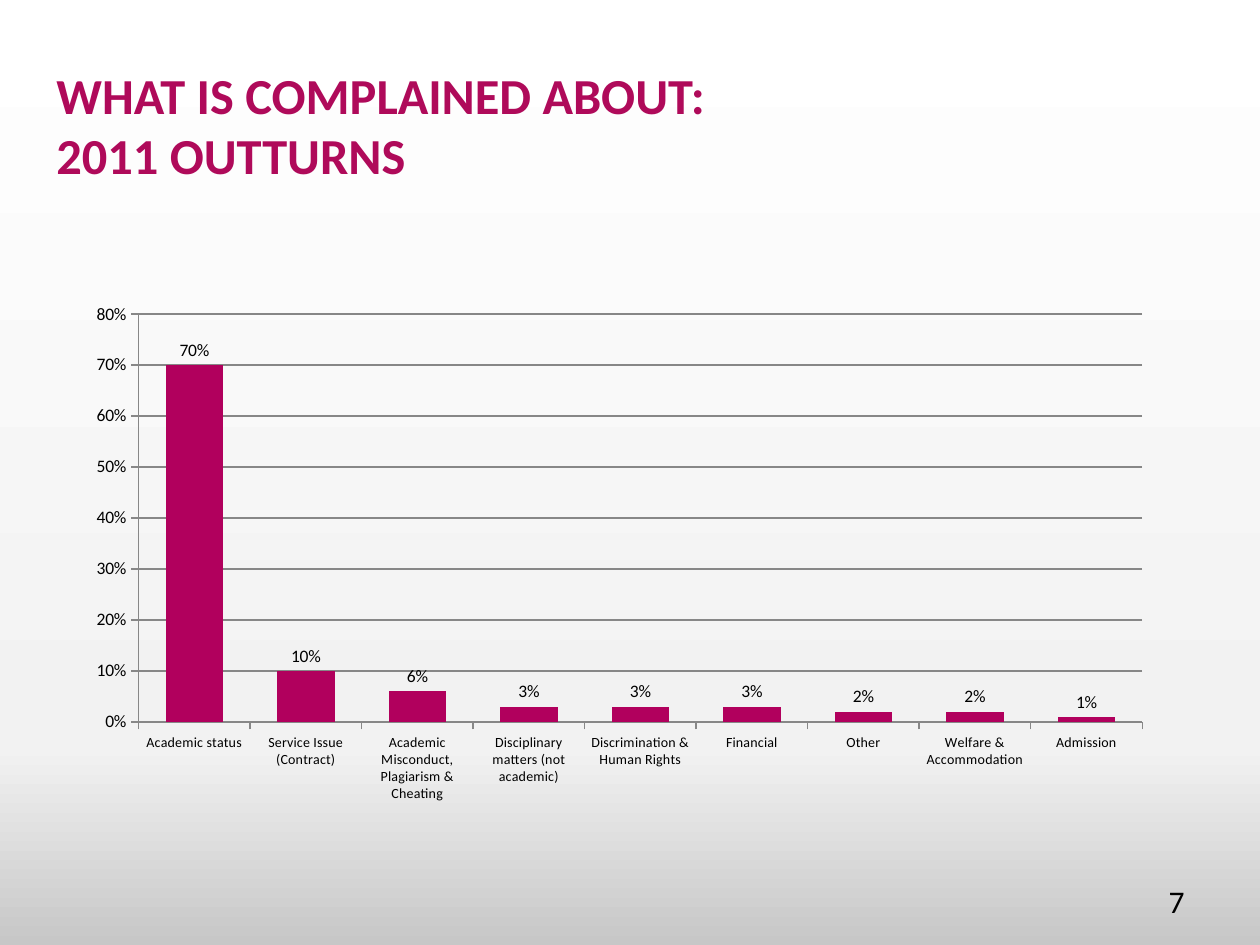
from copy import deepcopy
from dataclasses import dataclass

from lxml import etree
from pptx import Presentation
from pptx.chart.data import CategoryChartData
from pptx.dml.color import RGBColor as RGB
from pptx.enum.chart import XL_CHART_TYPE as ChartType
from pptx.enum.chart import XL_LABEL_POSITION as LabelPosition
from pptx.enum.chart import XL_TICK_MARK as TickMark
from pptx.enum.text import MSO_ANCHOR as Anchor
from pptx.enum.text import PP_ALIGN as Align
from pptx.oxml.ns import qn
from pptx.util import Pt


@dataclass(frozen=True)
class Theme:
    font: str = "Calibri"
    title: RGB = RGB(0xAF, 0x0A, 0x5A)
    bar: RGB = RGB(0xB1, 0x00, 0x5D)
    text: RGB = RGB(0, 0, 0)
    axis: RGB = RGB(0x87, 0x87, 0x87)
    background: tuple = ((0, "FFFFFF"), (0.79, "F2F2F2"), (1, "C7C7C7"))
    title_size: float = 28.8
    number_size: int = 18
    chart_size: int = 10
    category_size: int = 8


THEME = Theme()
PX = 914400 / 126


def px(*lengths):
    """Turn px lengths into EMU."""
    return [round(length * PX) for length in lengths]


def add_text(box, lines, size, color, bold=False, align=Align.LEFT, anchor=Anchor.MIDDLE):
    shape = slide.shapes.add_textbox(*px(*box))
    frame = shape.text_frame
    frame.word_wrap = True
    frame.vertical_anchor = anchor
    paragraph = frame.paragraphs[0]
    paragraph.alignment = align
    for index, line in enumerate(lines):
        if index:
            paragraph.add_line_break()
        run = paragraph.add_run()
        run.text = line
        run.font.name = THEME.font
        run.font.size = Pt(size)
        run.font.bold = bold
        run.font.color.rgb = color
    return frame


presentation = Presentation()
presentation.slide_width, presentation.slide_height = px(1260, 945)
slide = presentation.slides.add_slide(presentation.slide_layouts[6])

# Background
fill = slide.background.fill
fill.gradient()
fill.gradient_angle = 270
stop_list = next(slide.element.iter(qn("a:gsLst")))
stop_list.insert(1, deepcopy(stop_list[0]))
for stop, (position, color) in zip(fill.gradient_stops, THEME.background):
    stop.position = position
    stop.color.rgb = RGB.from_string(color)

# Title
title = add_text((44, 55, 814, 110), ["WHAT IS COMPLAINED ABOUT:", "2011 OUTTURNS"],
                 THEME.title_size, THEME.title, bold=True, anchor=Anchor.TOP)
title.margin_top = px(9)[0]

# Complaint chart
complaints = {
    "Academic status": 0.7,
    "Service Issue (Contract)": 0.1,
    "Academic Misconduct, Plagiarism & Cheating": 0.06,
    "Disciplinary matters (not academic)": 0.03,
    "Discrimination & Human Rights": 0.03,
    "Financial": 0.03,
    "Other": 0.02,
    "Welfare & Accommodation": 0.02,
    "Admission": 0.01,
}
chart_data = CategoryChartData(number_format="0%")
chart_data.categories = list(complaints)
chart_data.add_series("Series 1", list(complaints.values()))
chart = slide.shapes.add_chart(
    ChartType.COLUMN_CLUSTERED, *px(84, 276, 1091, 544), chart_data).chart
chart.has_legend = False
chart.has_title = False
chart.font.name = THEME.font
chart.font.size = Pt(THEME.chart_size)
chart.font.color.rgb = THEME.text

value_axis, category_axis = chart.value_axis, chart.category_axis
value_axis.minimum_scale, value_axis.maximum_scale = 0, 0.8
value_axis.major_unit = 0.1
value_axis.has_major_gridlines = True
value_axis.tick_labels.number_format = "0%"
value_axis.tick_labels.number_format_is_linked = False
category_axis.tick_labels.font.size = Pt(THEME.category_size)
for axis in (value_axis, category_axis):
    axis.major_tick_mark = TickMark.OUTSIDE
for lines in (value_axis, category_axis, value_axis.major_gridlines):
    lines.format.line.color.rgb = THEME.axis
    lines.format.line.width = Pt(0.75)

plot = chart.plots[0]
plot.gap_width = 94
plot.vary_by_categories = False
bars = plot.series[0].format
bars.fill.solid()
bars.fill.fore_color.rgb = THEME.bar
plot.has_data_labels = True
labels = plot.data_labels
labels.show_value = True
labels.number_format = "0%"
labels.number_format_is_linked = False
labels.position = LabelPosition.OUTSIDE_END

# Inner plot area as fractions of the chart
plot_area = next(chart.element.iter(qn("c:plotArea")))
for old_layout in plot_area.findall(qn("c:layout")):
    plot_area.remove(old_layout)
layout = etree.Element(qn("c:layout"))
plot_area.insert(0, layout)
manual = etree.SubElement(layout, qn("c:manualLayout"))
settings = {"layoutTarget": "inner", "xMode": "edge", "yMode": "edge",
            "x": 0.05, "y": 0.07, "w": 0.92, "h": 0.75}
for name, value in settings.items():
    etree.SubElement(manual, qn(f"c:{name}")).set("val", str(value))

# Page number
add_text((903, 876, 294, 50), ["7"], THEME.number_size, THEME.text, align=Align.RIGHT)

presentation.save("out.pptx")
